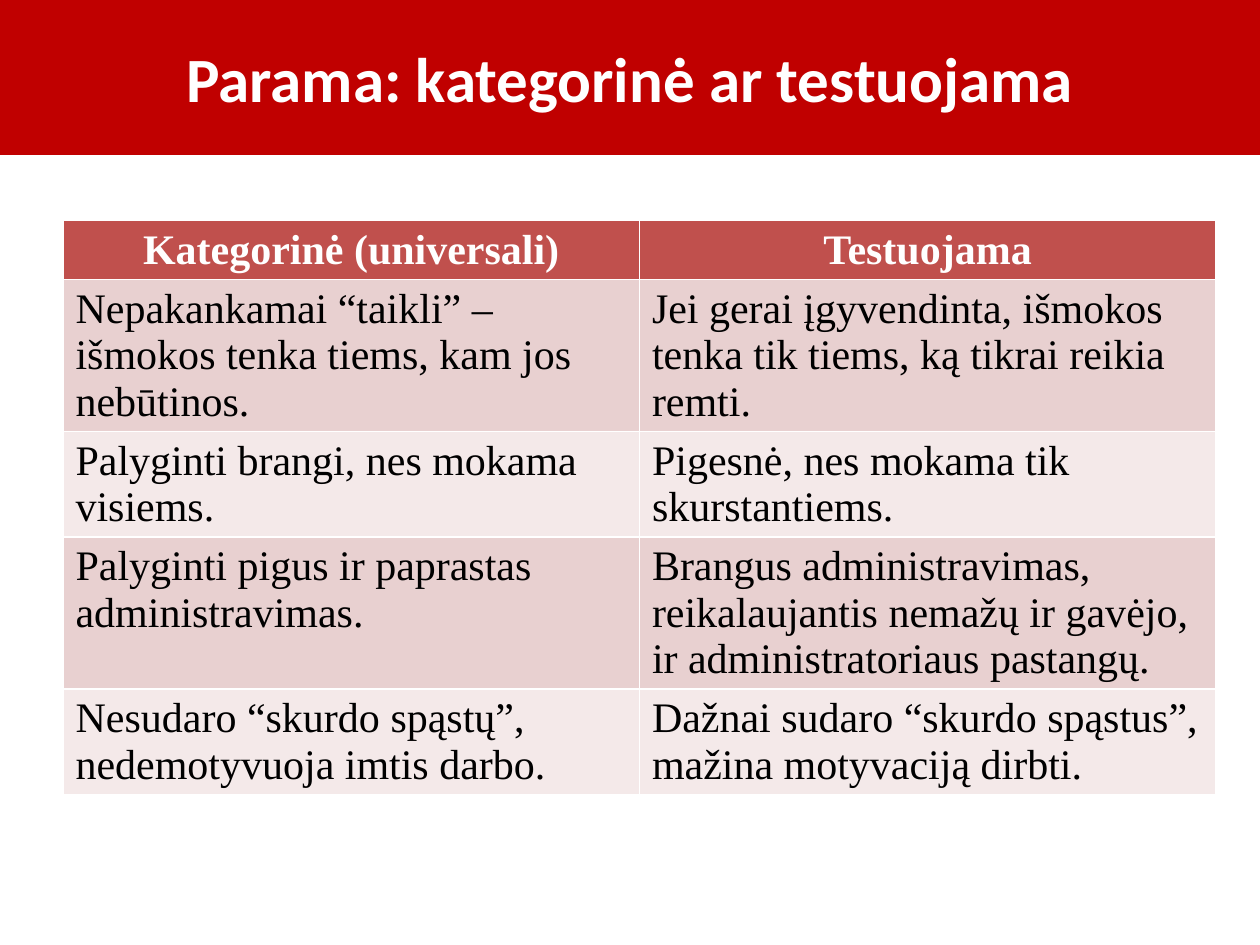
from typing import NamedTuple

from pptx import Presentation
from pptx import util as u
from pptx.dml.color import RGBColor
from pptx.enum import text

COLOURS = {
    "banner": "C00000",
    "header": "C0504D",
    "odd": "E8D0D0",
    "even": "F4E9E9",
    "light": "FFFFFF",
    "dark": "000000",
}
TABLE_LEFT, TABLE_TOP, TABLE_WIDTH, TABLE_HEIGHT = 0.5, 1.75, 9.15, 4.9
ROW_HEIGHT = 0.41  # minimum; rows grow with their text


class Comparison(NamedTuple):
    categorical: str
    tested: str


HEADINGS = Comparison("Kategorinė (universali)", "Testuojama")
COMPARISONS = [
    Comparison("Nepakankamai “taikli” – išmokos tenka tiems, kam jos nebūtinos.",
               "Jei gerai įgyvendinta, išmokos tenka tik tiems, ką tikrai reikia remti."),
    Comparison("Palyginti brangi, nes mokama visiems.",
               "Pigesnė, nes mokama tik skurstantiems."),
    Comparison("Palyginti pigus ir paprastas administravimas.",
               "Brangus administravimas, reikalaujantis nemažų ir gavėjo, "
               "ir administratoriaus pastangų."),
    Comparison("Nesudaro “skurdo spąstų”, nedemotyvuoja imtis darbo.",
               "Dažnai sudaro “skurdo spąstus”, mažina motyvaciją dirbti."),
]


def colour(key: str) -> RGBColor:
    return RGBColor.from_string(COLOURS[key])


def paint(fill, key: str) -> None:
    fill.solid()
    fill.fore_color.rgb = colour(key)


def style(paragraph, font_name: str, size: int, key: str, heading: bool) -> None:
    font = paragraph.font
    font.name, font.size, font.bold = font_name, u.Pt(size), heading
    font.color.rgb = colour(key)
    paragraph.alignment = text.PP_ALIGN.CENTER if heading else text.PP_ALIGN.LEFT


def add_banner(slide, wording: str, width: int, height: int) -> None:
    banner = slide.shapes.title
    banner.left, banner.top, banner.width, banner.height = 0, 0, width, height
    paint(banner.fill, "banner")
    frame = banner.text_frame
    frame.text = wording
    frame.auto_size = text.MSO_AUTO_SIZE.NONE
    frame.vertical_anchor = text.MSO_ANCHOR.MIDDLE
    style(frame.paragraphs[0], "Calibri", 36, "light", heading=True)


def add_comparison_table(slide, rows: list[Comparison]) -> None:
    table_frame = slide.shapes.add_table(
        len(rows), len(Comparison._fields), u.Inches(TABLE_LEFT), u.Inches(TABLE_TOP),
        u.Inches(TABLE_WIDTH), u.Inches(TABLE_HEIGHT))
    table = table_frame.table
    for index, comparison in enumerate(rows):
        table.rows[index].height = u.Inches(ROW_HEIGHT)
        heading = index == 0
        band = "header" if heading else ("even", "odd")[index % 2]
        for cell, wording in zip(table.rows[index].cells, comparison):
            cell.text = wording
            paint(cell.fill, band)
            style(cell.text_frame.paragraphs[0], "Times New Roman", 24,
                  "light" if heading else "dark", heading)
    table_frame.height = u.Inches(TABLE_HEIGHT)


def main() -> None:
    deck = Presentation()
    deck.slide_width, deck.slide_height = u.Inches(10), u.Inches(7.5)
    slide = deck.slides.add_slide(deck.slide_layouts.get_by_name("Title Only"))

    # Title banner across the top
    add_banner(slide, "Parama: kategorinė ar testuojama", deck.slide_width, u.Inches(1.23))

    # Two kinds of support side by side
    add_comparison_table(slide, [HEADINGS, *COMPARISONS])

    deck.save("out.pptx")


if __name__ == "__main__":
    main()
